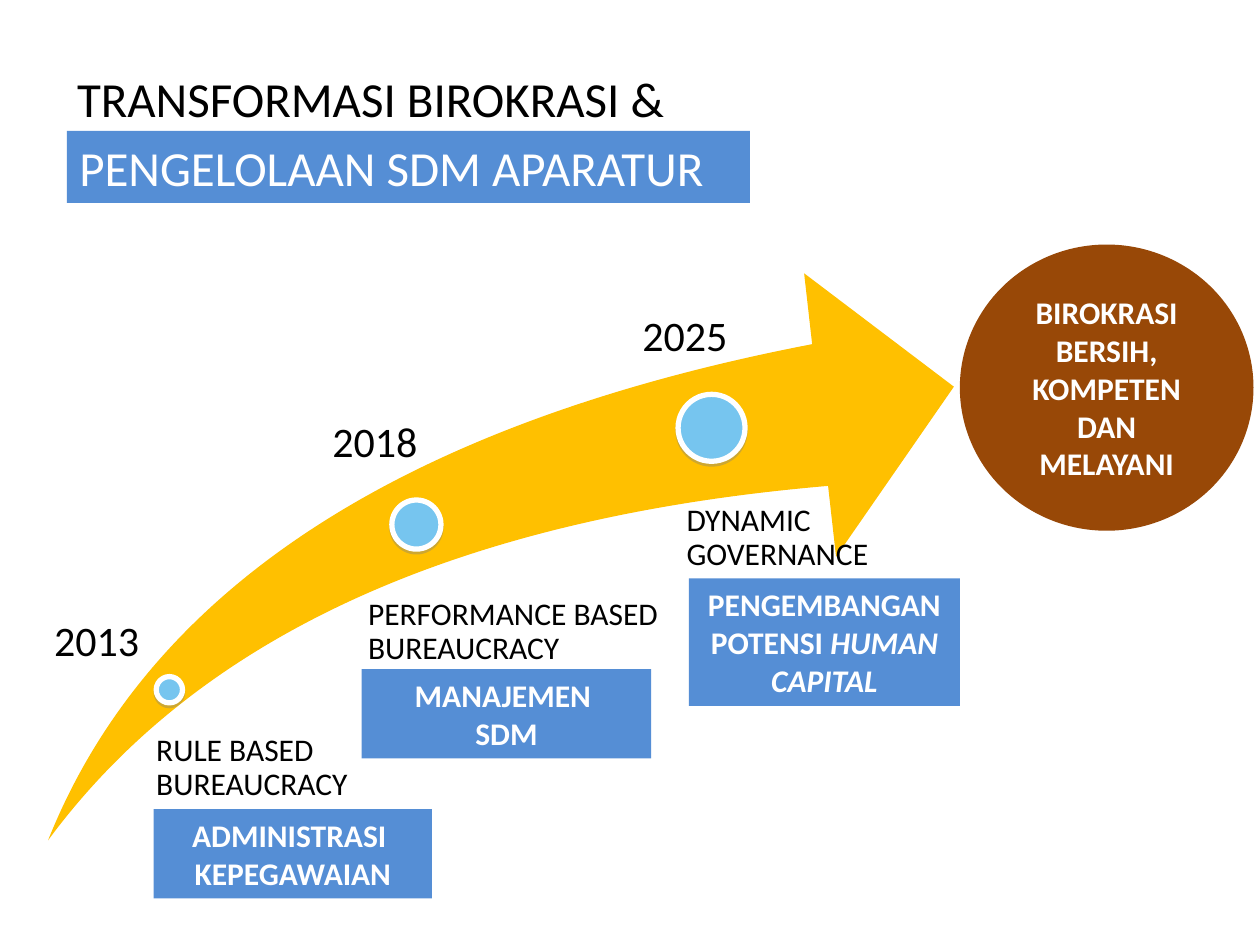
from dataclasses import dataclass

from lxml import etree
from pptx import Presentation
from pptx import util as u
from pptx.dml.color import RGBColor
from pptx.enum import shapes, text
from pptx.oxml import ns

BLACK = RGBColor(0x00, 0x00, 0x00)
WHITE = RGBColor(0xFF, 0xFF, 0xFF)
GOLD = RGBColor(0xFF, 0xC0, 0x00)
SKY = RGBColor(0x76, 0xC5, 0xEF)
BLUE = RGBColor(0x55, 0x8E, 0xD5)
BROWN = RGBColor(0x98, 0x48, 0x07)
FONT = "Calibri"
LEFT, CENTER = text.PP_ALIGN.LEFT, text.PP_ALIGN.CENTER
SHAPE = shapes.MSO_SHAPE


@dataclass
class Box:
    left: float
    top: float
    width: float
    height: float

    def lengths(self) -> list:
        return [u.Cm(v) for v in (self.left, self.top, self.width, self.height)]


@dataclass
class Milestone:
    year: str
    year_box: Box
    dot: Box
    caption: str
    caption_box: Box
    indent: float
    focus: list[str]
    focus_box: Box
    italic: str = ""


MILESTONES = [
    Milestone("2013", Box(0.84, 12.27, 2.24, 1.3), Box(3.15, 13.64, 0.53, 0.53),
              "RULE BASED BUREAUCRACY", Box(2.87, 14.81, 4.85, 1.47), 0.28,
              ["ADMINISTRASI ", "KEPEGAWAIAN"], Box(3.1, 16.31, 5.61, 1.8)),
    Milestone("2018", Box(6.45, 8.26, 2.24, 1.3), Box(7.9, 10.08, 0.99, 0.99),
              "PERFORMANCE BASED BUREAUCRACY", Box(6.91, 12.07, 8.64, 1.91), 0.51,
              ["MANAJEMEN ", "SDM"], Box(7.29, 13.49, 5.84, 1.8)),
    Milestone("2025", Box(12.7, 6.12, 2.24, 1.3), Box(13.67, 7.95, 1.35, 1.35),
              "DYNAMIC GOVERNANCE", Box(13.13, 10.16, 5, 1.57), 0.71,
              ["PENGEMBANGAN POTENSI "], Box(13.89, 11.66, 5.46, 2.57), "HUMAN CAPITAL"),
]


def write(tf, lines: list[str], size: int, color: RGBColor, bold: bool = False,
          align=LEFT, wrap: bool = True) -> None:
    tf.word_wrap = wrap
    for i, line in enumerate(lines):
        p = tf.add_paragraph() if i else tf.paragraphs[0]
        p.add_run().text = line
        p.alignment = align
        p.font.name, p.font.size, p.font.bold = FONT, u.Pt(size), bold
        p.font.color.rgb = color


def add_filled(s, kind, box: Box, fill: RGBColor):
    sp = s.shapes.add_shape(kind, *box.lengths())
    sp.shadow.inherit = False
    sp.fill.solid()
    sp.fill.fore_color.rgb = fill
    sp.line.fill.background()
    return sp


def add_dot(s, box: Box) -> None:
    sp = add_filled(s, SHAPE.OVAL, box, SKY)
    sp.line.color.rgb = WHITE
    sp.line.width = u.Pt(3)
    effects = sp._element.spPr.find(ns.qn("a:effectLst"))
    shadow = etree.SubElement(effects, ns.qn("a:outerShdw"), blurRad="0",
                              dist=str(u.Pt(1.6)), dir="5400000", rotWithShape="0")
    color = etree.SubElement(shadow, ns.qn("a:srgbClr"), val="808080")
    etree.SubElement(color, ns.qn("a:alpha"), val="38000")


def add_caption(s, m: Milestone) -> None:
    tf = s.shapes.add_textbox(*m.caption_box.lengths()).text_frame
    tf.margin_left = u.Cm(m.indent)
    tf.margin_top = tf.margin_right = tf.margin_bottom = 0
    write(tf, [m.caption], 18, BLACK)
    tf.paragraphs[0].line_spacing = 0.9


def add_milestone(s, m: Milestone) -> None:
    add_dot(s, m.dot)
    add_caption(s, m)
    year = s.shapes.add_textbox(*m.year_box.lengths())
    write(year.text_frame, [m.year], 24, BLACK, wrap=False)
    tf = add_filled(s, SHAPE.RECTANGLE, m.focus_box, BLUE).text_frame
    write(tf, m.focus, 18, WHITE, True, CENTER)
    if m.italic:
        r = tf.paragraphs[-1].add_run()
        r.text = m.italic
        r.font.italic = True


def add_heading(s) -> None:
    title = s.shapes.title
    title.left, title.top, title.width, title.height = Box(1.3, 0.91, 13.59, 2.11).lengths()
    tf = title.text_frame
    tf.auto_size = text.MSO_AUTO_SIZE.NONE
    tf.vertical_anchor = text.MSO_ANCHOR.MIDDLE
    write(tf, ["TRANSFORMASI BIROKRASI &"], 28, BLACK)
    band = add_filled(s, SHAPE.RECTANGLE, Box(1.35, 2.64, 13.77, 1.45), BLUE)
    write(band.text_frame, ["PENGELOLAAN SDM APARATUR"], 28, WHITE)


def main() -> None:
    prs = Presentation()
    prs.slide_width, prs.slide_height = u.Cm(25.4), u.Cm(19.05)
    s = prs.slides.add_slide(prs.slide_layouts[5])
    add_heading(s)
    arrow = add_filled(s, SHAPE.SWOOSH_ARROW, Box(0.97, 5.51, 18.26, 11.43), GOLD)
    arrow.adjustments[0] = arrow.adjustments[1] = 0.25
    for m in MILESTONES:
        add_milestone(s, m)
    goal = add_filled(s, SHAPE.OVAL, Box(19.35, 4.93, 5.92, 5.77), BROWN)
    write(goal.text_frame, ["BIROKRASI BERSIH, KOMPETEN DAN MELAYANI"], 18, WHITE, True, CENTER)
    prs.save("out.pptx")


if __name__ == "__main__":
    main()
